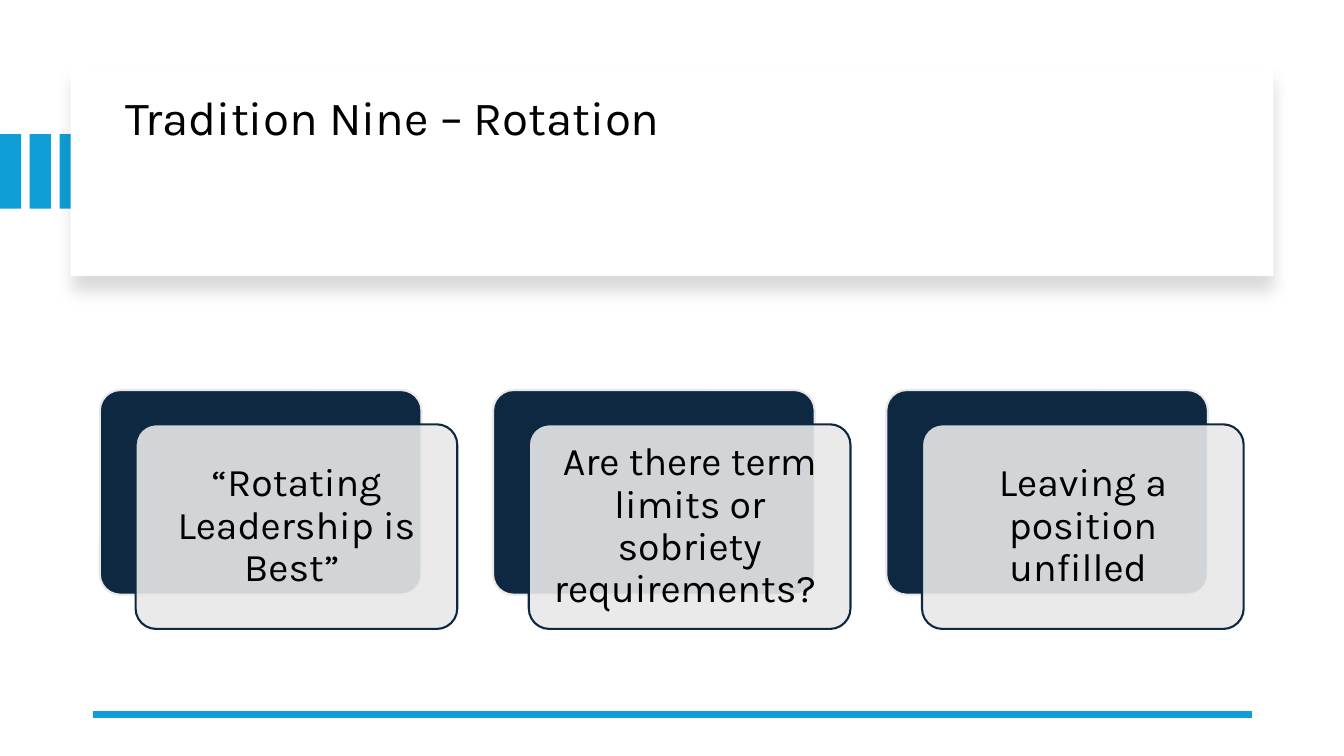
"""Build the Tradition Nine rotation slide."""
from dataclasses import dataclass

from lxml.etree import SubElement
from pptx import Presentation
from pptx.dml.color import RGBColor
from pptx.enum.shapes import MSO_CONNECTOR, MSO_SHAPE
from pptx.enum.text import MSO_ANCHOR, MSO_AUTO_SIZE, PP_ALIGN
from pptx.oxml.ns import qn
from pptx.util import Inches, Pt

TITLE = "Tradition Nine – Rotation"
CARDS = [
    "“Rotating Leadership is Best” ",
    "Are there term limits or sobriety requirements? ",
    "Leaving a position unfilled ",
]


@dataclass(frozen=True)
class Theme:
    """Colours, font and type sizes."""

    accent: RGBColor = RGBColor(0x0F, 0x9E, 0xD5)
    navy: RGBColor = RGBColor(0x0E, 0x28, 0x41)
    grey: RGBColor = RGBColor(0xE8, 0xE8, 0xE8)
    white: RGBColor = RGBColor(0xFF, 0xFF, 0xFF)
    black: RGBColor = RGBColor(0, 0, 0)
    font: str = "Karla"
    title_size: int = 34
    card_size: int = 28


THEME = Theme()
SLIDE_SIZE = (13.33, 7.5)
STRIPE_COUNT, STRIPE_STEP = 3, 0.295
STRIPE_TOP, STRIPE_WIDTH, STRIPE_HEIGHT = 1.33, 0.21, 0.74
PANEL = (0.7, 0.67, 11.93, 2.07)
TITLE_BOX = (1.14, 0.89, 11.13, 1.7)
RULE_LEFT, RULE_RIGHT, RULE_TOP, RULE_WEIGHT = 0.92, 12.42, 7.09, 4.5
CARD_LEFT, CARD_TOP, CARD_STEP = 0.99, 3.87, 3.9
CARD_SIZE, FRONT_SHIFT = (3.19, 2.03), (0.355, 0.34)
CARD_INSET, CARD_CORNER, CARD_OPACITY = 0.18, 0.1, 90


def apply(target, **values):
    """Set each named attribute on the target."""
    for name, value in values.items():
        setattr(target, name, value)


def add_block(shapes, kind, box, fill, line=None):
    """Add a filled shape, outlined if a line colour is given."""
    shape = shapes.add_shape(kind, *map(Inches, box))
    shape.shadow.inherit = False
    shape.fill.solid()
    shape.fill.fore_color.rgb = fill
    if line is None:
        shape.line.fill.background()
    else:
        shape.line.color.rgb = line
        shape.line.width = Pt(1.5)
    return shape


def write_text(shape, text, size, frame_format, alignment):
    """Put one formatted paragraph into the shape."""
    frame = shape.text_frame
    apply(frame, word_wrap=True, auto_size=MSO_AUTO_SIZE.NONE, **frame_format)
    paragraph = frame.paragraphs[0]
    paragraph.text = text
    apply(paragraph, alignment=alignment, line_spacing=0.9, space_before=Pt(0))
    apply(paragraph.runs[0].font, name=THEME.font, size=Pt(size))
    paragraph.runs[0].font.color.rgb = THEME.black


def add_soft_shadow(shape):
    """Cast a faint shadow straight down."""
    effects = shape.element.spPr.find(qn("a:effectLst"))
    shadow = SubElement(effects, qn("a:outerShdw"), blurRad=str(Pt(11)),
                        dist=str(Pt(10)), dir="5400000", algn="t", rotWithShape="0")
    colour = SubElement(shadow, qn("a:srgbClr"), val=str(THEME.black))
    SubElement(colour, qn("a:alpha"), val="15000")


def add_header(slide):
    """Add the stripes, the white panel and the title on top of it."""
    stripes = slide.shapes.add_group_shape().shapes
    for index in range(STRIPE_COUNT):
        box = (index * STRIPE_STEP, STRIPE_TOP, STRIPE_WIDTH, STRIPE_HEIGHT)
        add_block(stripes, MSO_SHAPE.RECTANGLE, box, THEME.accent)
    panel = add_block(slide.shapes, MSO_SHAPE.RECTANGLE, PANEL, THEME.white)
    add_soft_shadow(panel)
    title = slide.shapes.title
    apply(title, **dict(zip(("left", "top", "width", "height"), map(Inches, TITLE_BOX))))
    write_text(title, TITLE, THEME.title_size,
               {"vertical_anchor": MSO_ANCHOR.TOP}, PP_ALIGN.LEFT)
    panel.element.addnext(title.element)


def add_rule(slide):
    """Add the line at the foot of the slide."""
    ends = map(Inches, (RULE_RIGHT, RULE_TOP, RULE_LEFT, RULE_TOP))
    rule = slide.shapes.add_connector(MSO_CONNECTOR.STRAIGHT, *ends)
    rule.line.color.rgb = THEME.accent
    rule.line.width = Pt(RULE_WEIGHT)
    SubElement(rule.element.spPr, qn("a:effectLst"))


def add_cards(slide):
    """Add each card as a dark back and a translucent front with text."""
    shapes = slide.shapes.add_group_shape().shapes
    margins = ("margin_left", "margin_top", "margin_right", "margin_bottom")
    frame_format = dict.fromkeys(margins, Inches(CARD_INSET))
    frame_format["vertical_anchor"] = MSO_ANCHOR.MIDDLE
    for index, text in enumerate(CARDS):
        left = CARD_LEFT + index * CARD_STEP
        back = add_block(shapes, MSO_SHAPE.ROUNDED_RECTANGLE,
                         (left, CARD_TOP, *CARD_SIZE), THEME.navy, THEME.grey)
        front_box = (left + FRONT_SHIFT[0], CARD_TOP + FRONT_SHIFT[1], *CARD_SIZE)
        front = add_block(shapes, MSO_SHAPE.ROUNDED_RECTANGLE,
                          front_box, THEME.grey, THEME.navy)
        for shape in (back, front):
            shape.adjustments[0] = CARD_CORNER
        colour = front.element.spPr.find(qn("a:solidFill")).find(qn("a:srgbClr"))
        SubElement(colour, qn("a:alpha"), val=str(CARD_OPACITY * 1000))
        write_text(front, text, THEME.card_size, frame_format, PP_ALIGN.CENTER)


def main():
    """Build and save the presentation."""
    presentation = Presentation()
    width, height = map(Inches, SLIDE_SIZE)
    apply(presentation, slide_width=width, slide_height=height)
    slide = presentation.slides.add_slide(presentation.slide_layouts[5])
    add_header(slide)
    add_rule(slide)
    add_cards(slide)
    presentation.save("out.pptx")


if __name__ == "__main__":
    main()
